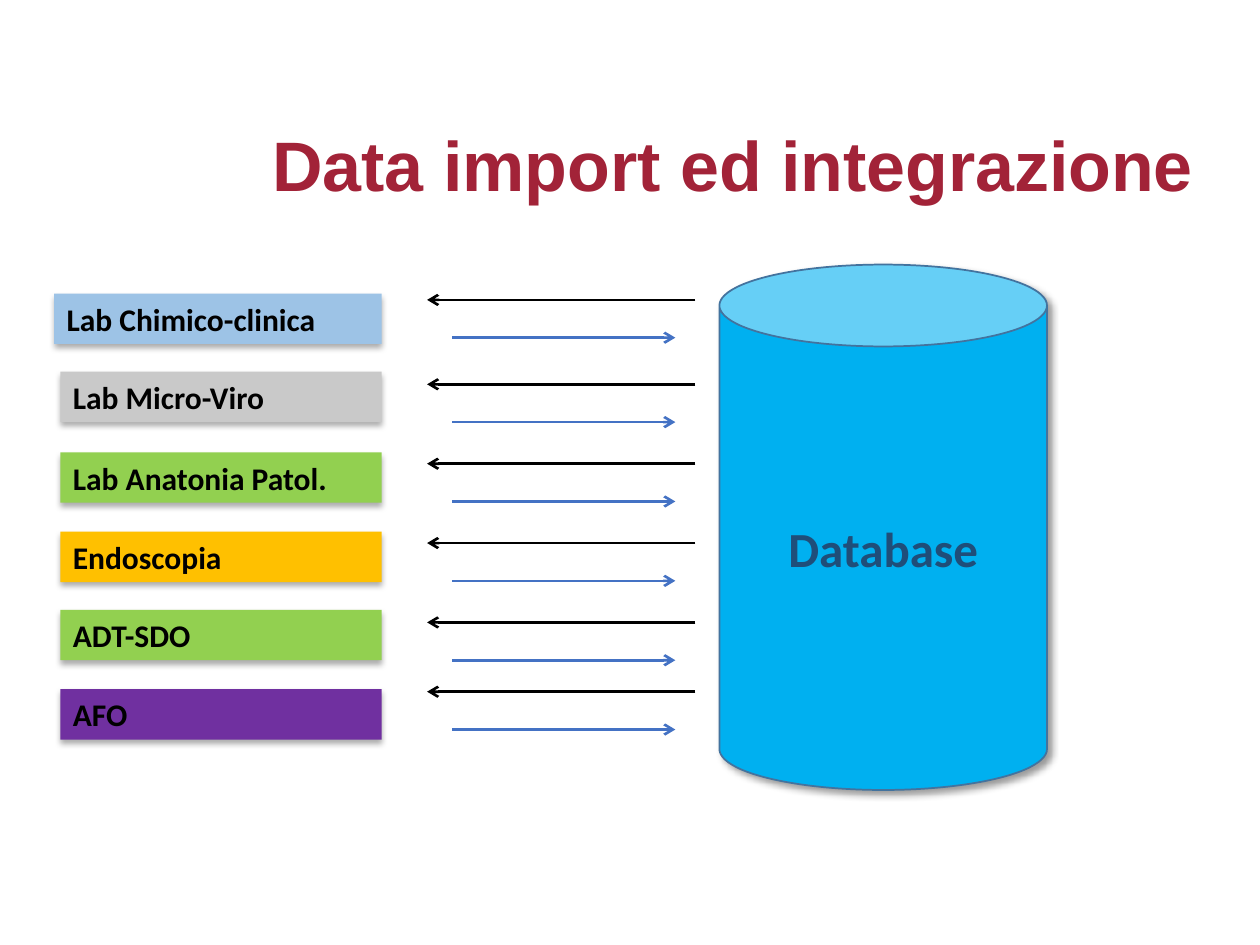
from lxml import etree
from pptx import Presentation
from pptx.dml.color import RGBColor
from pptx.enum.shapes import MSO_CONNECTOR, MSO_SHAPE
from pptx.enum.text import MSO_ANCHOR, MSO_AUTO_SIZE, PP_ALIGN
from pptx.oxml import parse_xml
from pptx.oxml.ns import nsdecls, qn
from pptx.util import Inches, Pt

LEFT, CENTER, RIGHT = PP_ALIGN.LEFT, PP_ALIGN.CENTER, PP_ALIGN.RIGHT
TOP, MIDDLE = MSO_ANCHOR.TOP, MSO_ANCHOR.MIDDLE
RECTANGLE, CAN = MSO_SHAPE.RECTANGLE, MSO_SHAPE.CAN
STRAIGHT = MSO_CONNECTOR.STRAIGHT

BLACK = RGBColor(0x00, 0x00, 0x00)
CRIMSON = RGBColor(0xA2, 0x23, 0x38)
PALE_BLUE = RGBColor(0x9D, 0xC3, 0xE6)
GREY = RGBColor(0xC9, 0xC9, 0xC9)
GREEN = RGBColor(0x92, 0xD0, 0x50)
AMBER = RGBColor(0xFF, 0xC0, 0x00)
PURPLE = RGBColor(0x70, 0x30, 0xA0)
SKY = RGBColor(0x00, 0xB0, 0xF0)
STEEL = RGBColor(0x43, 0x73, 0x9E)
NAVY = RGBColor(0x1F, 0x4E, 0x79)
ARROW_BLUE = RGBColor(0x44, 0x72, 0xC4)

TITLE = "Data import ed integrazione"
# label, fill, left, top, height of the import arrow
SOURCES = [
    ("Lab Chimico-clinica", PALE_BLUE, 0.43, 2.33, 2.68),
    ("Lab Micro-Viro", GREY, 0.48, 2.95, 3.35),
    ("Lab Anatonia Patol.", GREEN, 0.48, 3.59, 3.98),
    ("Endoscopia", AMBER, 0.48, 4.22, 4.61),
    ("ADT-SDO", GREEN, 0.48, 4.84, 5.24),
    ("AFO", PURPLE, 0.48, 5.47, 5.79),
]
SOURCE_RIGHT, SOURCE_HEIGHT = 3.03, 0.4
# start, end, offset from the import arrow, colour
ARROWS = [(3.59, 5.36, 0, ARROW_BLUE), (5.52, 3.39, -0.3, BLACK)]

TITLE_FONT = {"name": "Arial", "size": Pt(40), "bold": True}
SOURCE_FONT = {"name": "Calibri", "size": Pt(18), "bold": True}
DATABASE_FONT = {"name": "Calibri", "size": Pt(28), "bold": True}
# opacity in percent, blur and distance in points, direction in degrees
SOURCE_SHADOW = (32, 3.5, 2.2, 90)
DATABASE_SHADOW = (40, 4, 3, 45)


def write_text(shape, text, font, color, alignment, anchor):
    frame = shape.text_frame
    frame.word_wrap = True
    frame.vertical_anchor = anchor
    paragraph = frame.paragraphs[0]
    paragraph.alignment = alignment
    run = paragraph.add_run()
    run.text = text
    for name, value in font.items():
        setattr(run.font, name, value)
    run.font.color.rgb = color
    return paragraph


def add_shadow(shape, opacity, blur, distance, direction):
    shape.shadow.inherit = False
    effects = shape._element.spPr.find(qn("a:effectLst"))
    effects.append(parse_xml(
        f'<a:outerShdw {nsdecls("a")} blurRad="{Pt(blur)}" dist="{Pt(distance)}" '
        f'dir="{direction * 60000}" algn="ctr" rotWithShape="0">'
        f'<a:srgbClr val="000000"><a:alpha val="{opacity * 1000}"/></a:srgbClr>'
        '</a:outerShdw>'))


def add_block(slide, kind, box, fill, shadow):
    shape = slide.shapes.add_shape(kind, *map(Inches, box))
    shape.fill.solid()
    shape.fill.fore_color.rgb = fill
    shape.line.fill.background()
    add_shadow(shape, *shadow)
    return shape


def add_arrow(slide, start, end, y, color):
    arrow = slide.shapes.add_connector(
        STRAIGHT, Inches(start), Inches(y), Inches(end), Inches(y))
    arrow.line.color.rgb = color
    arrow.line.width = Pt(1.5)
    etree.SubElement(arrow.line._get_or_add_ln(), qn("a:tailEnd"), type="arrow")
    etree.SubElement(arrow._element.spPr, qn("a:effectLst"))


def main():
    presentation = Presentation()
    presentation.slide_width, presentation.slide_height = Inches(10), Inches(7.5)
    slide = presentation.slides.add_slide(presentation.slide_layouts[5])

    title = slide.shapes.title
    title.left, title.top = Inches(1.48), Inches(0.99)
    title.width, title.height = Inches(8.09), Inches(1.69)
    paragraph = write_text(title, TITLE, TITLE_FONT, CRIMSON, RIGHT, TOP)
    paragraph.line_spacing = 0.9

    for label, fill, left, top, _ in SOURCES:
        box = (left, top, SOURCE_RIGHT - left, SOURCE_HEIGHT)
        source = add_block(slide, RECTANGLE, box, fill, SOURCE_SHADOW)
        write_text(source, label, SOURCE_FONT, BLACK, LEFT, TOP)
        source.text_frame.auto_size = MSO_AUTO_SIZE.SHAPE_TO_FIT_TEXT

    database = add_block(slide, CAN, (5.71, 2.1, 2.6, 4.17), SKY, DATABASE_SHADOW)
    database.line.color.rgb = STEEL
    database.line.width = Pt(1)
    write_text(database, "Database", DATABASE_FONT, NAVY, CENTER, MIDDLE)

    for start, end, offset, color in ARROWS:
        for *_, import_y in SOURCES:
            add_arrow(slide, start, end, import_y + offset, color)

    presentation.save("out.pptx")


if __name__ == "__main__":
    main()
